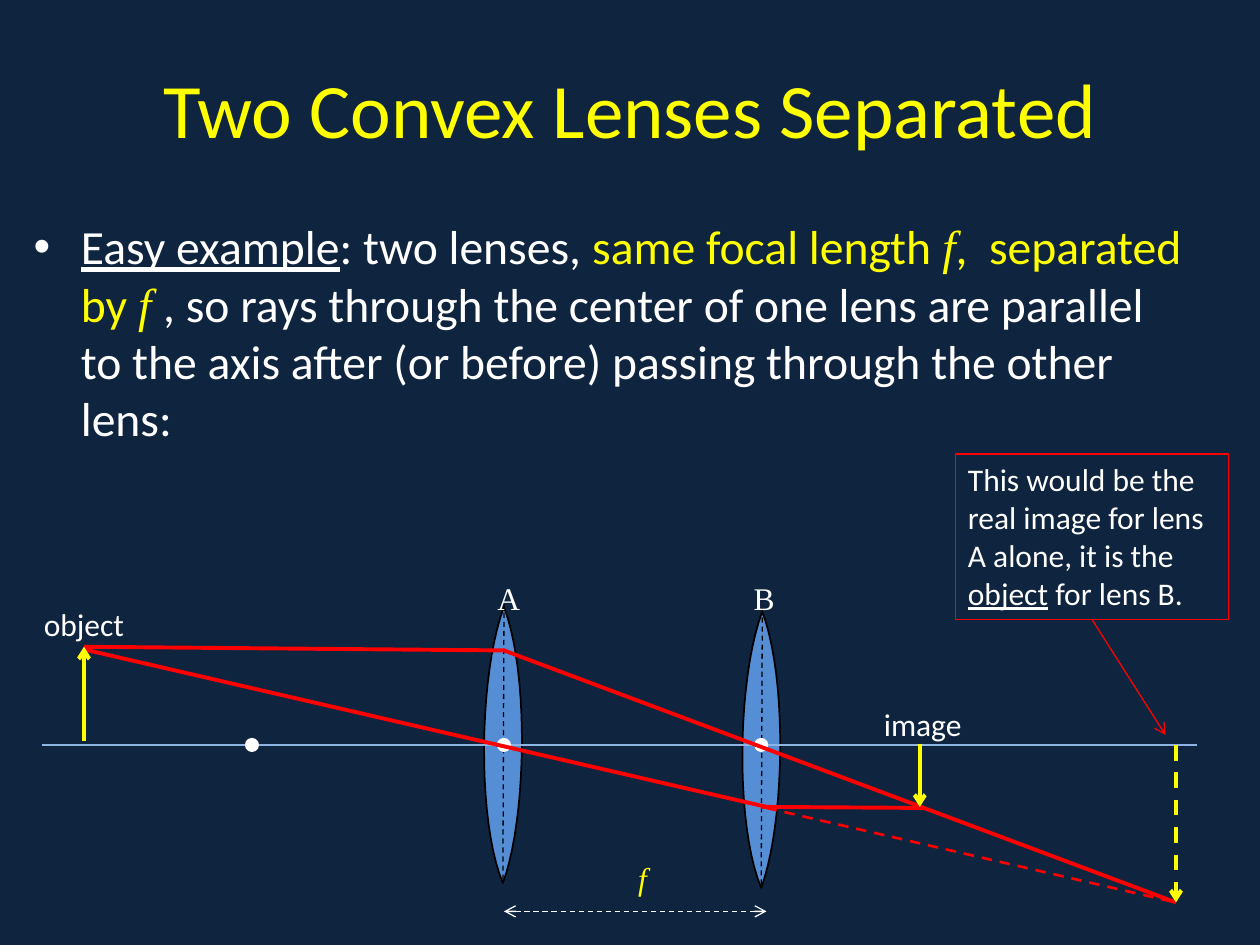
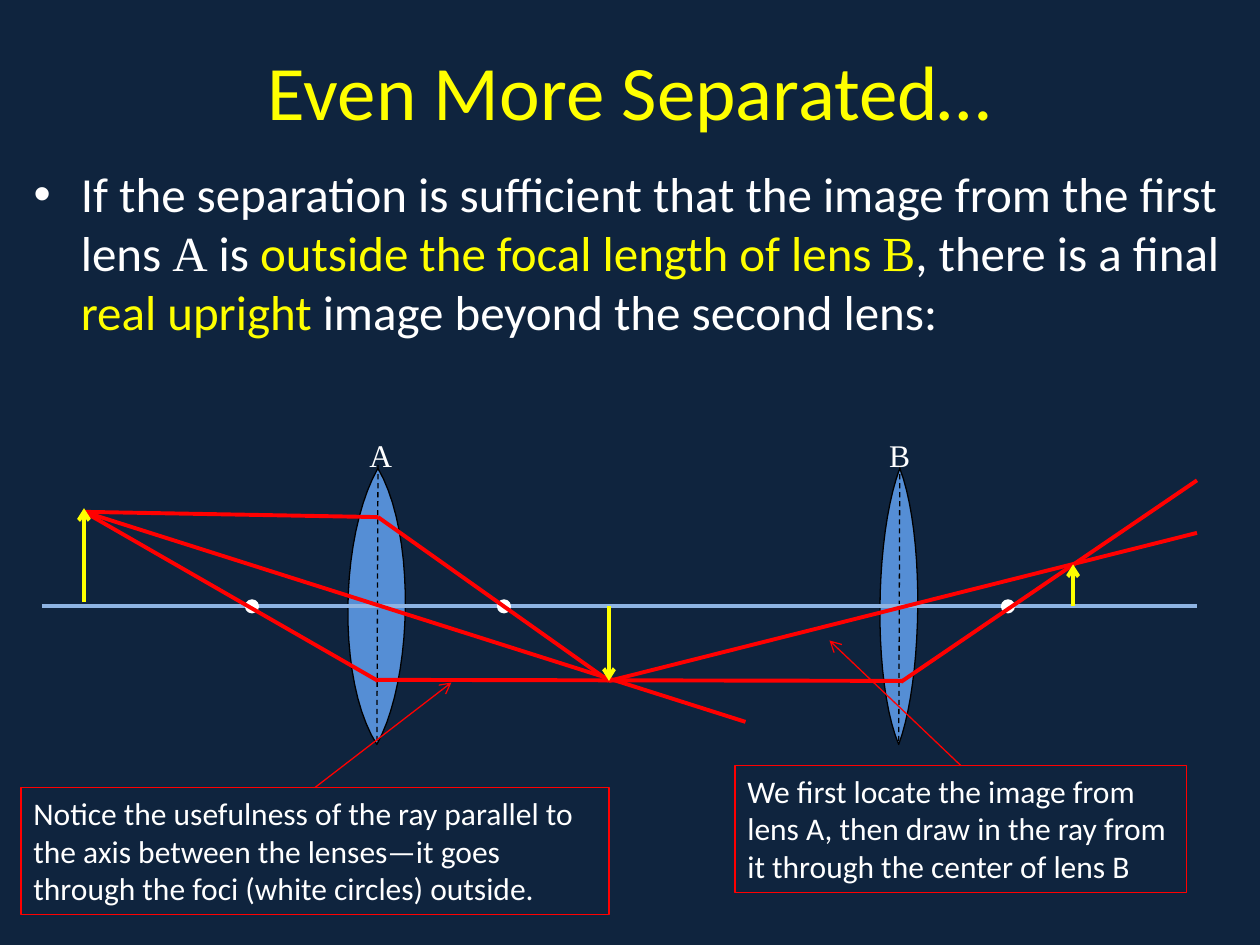
from itertools import chain

from lxml.etree import SubElement
from pptx import Presentation
from pptx.dml.color import RGBColor as RGB
from pptx.enum.dml import MSO_LINE as DASH
from pptx.enum.shapes import MSO_CONNECTOR as CONN, MSO_SHAPE as SHAPE
from pptx.enum.text import MSO_ANCHOR as ANCHOR, MSO_AUTO_SIZE as AUTO, PP_ALIGN as ALIGN
from pptx.oxml.ns import qn
from pptx.util import Emu, Inches, Pt

COLS = 120
WIDTH, HEIGHT = Inches(10), Inches(7.5)
CELL = WIDTH / COLS
LENS_HEIGHT = 26.3
AXIS = LENS_HEIGHT / 2
BOTTOM, TOP = 2, 0

COLORS = {
    "night": "0F243E", "white": "FFFFFF", "yellow": "FFFF00", "red": "FF0000",
    "lens": "558ED5", "axis": "8EB4E3", "black": "000000",
}
SANS = {"name": "Calibri"}
SERIF = {"name": "Times New Roman"}
STYLES = {
    "plain": ("white", SANS),
    "under": ("white", {**SANS, "underline": True}),
    "key": ("yellow", SANS),
    "serif": ("white", SERIF),
    "key serif": ("yellow", SERIF),
    "symbol": ("yellow", {**SERIF, "italic": True}),
}
TEXT_FRAME = {"word_wrap": True, "auto_size": AUTO.NONE, "vertical_anchor": ANCHOR.TOP}


def grid(*cells):
    return [Emu(round(n * CELL)) for n in cells]


def color(name):
    return RGB.from_string(COLORS[name])


def set_all(target, values):
    for name, value in values.items():
        setattr(target, name, value)


def write(tf, runs, size, align=ALIGN.LEFT, **frame):
    set_all(tf, {**TEXT_FRAME, **frame})
    p = tf.paragraphs[0]
    p.alignment = align
    for text, style in runs:
        shade, values = STYLES[style]
        r = p.add_run()
        r.text = text
        set_all(r.font, {**values, "size": Pt(size)})
        r.font.color.rgb = color(shade)


def place(sp, box):
    set_all(sp, dict(zip(("left", "top", "width", "height"), grid(*box))))


def paint(sp, fill, line, width):
    sp.shadow.inherit = False
    if fill:
        sp.fill.solid()
        sp.fill.fore_color.rgb = color(fill)
    else:
        sp.fill.background()
    sp.line.color.rgb = color(line)
    sp.line.width = Pt(width)


def draw_line(s, start, end, shade, width, dash=False, heads=()):
    cx = s.shapes.add_connector(CONN.STRAIGHT, *grid(*start, *end))
    cx.line.color.rgb = color(shade)
    cx.line.width = Pt(width)
    if dash:
        cx.line.dash_style = DASH.DASH
    ln = cx.line._get_or_add_ln()
    for head in heads:
        SubElement(ln, qn(f"a:{head}"), type="arrow")
    SubElement(cx._element.spPr, qn("a:effectLst"))
    return cx


def add_label(s, box, text, style="plain"):
    sp = s.shapes.add_textbox(*grid(*box))
    write(sp.text_frame, [(text, style)], 18)


def add_callout(s, box, runs, side, target):
    sp = s.shapes.add_shape(SHAPE.RECTANGLE, *grid(*box))
    paint(sp, None, "red", 0.75)
    write(sp.text_frame, runs, 18)
    col, row, w, h = box
    start = (col + w / 2, row + (h if side == BOTTOM else 0))
    pointer = draw_line(s, start, target, "red", 0.75, heads=["tailEnd"])
    pointer.begin_connect(sp, side)


def bezier(points, steps=20):
    for i in range(1, steps + 1):
        t = i / steps
        weights = ((1 - t) ** 3, 3 * t * (1 - t) ** 2, 3 * t * t * (1 - t), t ** 3)
        yield tuple(sum(w * pt[k] for w, pt in zip(weights, points)) for k in (0, 1))


def add_lens(s, x, y, bulge, outline):
    tip, foot = (0, 0), (-0.1, LENS_HEIGHT)
    left = [tip, (-0.97 * bulge, 6.5), (-1.03 * bulge, 20.4), foot]
    right = [foot, (0.87 * bulge, 20.2), (0.97 * bulge, 6.3), tip]
    edge = [grid(x + dx, y + dy) for dx, dy in chain(bezier(left), bezier(right))]
    builder = s.shapes.build_freeform(*grid(x, y))
    builder.add_line_segments(edge, close=True)
    paint(builder.convert_to_shape(), "lens", "black", outline)
    draw_line(s, (x, y - 0.3), (x - 0.1, y + LENS_HEIGHT - 0.3), "black", 0.75, dash=True)


def add_bench(s, box, lenses, foci, rays, arrows, axis_width, outline):
    col, row, w, h = box
    axis = row + h / 2

    def at(point):
        return col + point[0], axis + point[1]

    for x, drop, bulge in lenses:
        add_lens(s, col + x, row + drop, bulge, outline)
    draw_line(s, at((0, 0)), at((w, 0)), "axis", axis_width)
    for x in foci:
        cx, cy = at((x, 0))
        dot = s.shapes.add_shape(SHAPE.FLOWCHART_CONNECTOR, *grid(cx - 0.5, cy - 0.5, 1, 1))
        paint(dot, "white", "white", 2)
    for start, end, *dash in rays:
        draw_line(s, at(start), at(end), "red", 1.5 if dash else 2.25, bool(dash))
    for start, end, *dash in arrows:
        draw_line(s, at(start), at(end), "yellow", 2.25, bool(dash), ["tailEnd"])


def add_slide(prs, title, title_row, body, body_box, size):
    s = prs.slides.add_slide(prs.slide_layouts[1])
    place(s.shapes.title, (6, title_row, 108, 15))
    write(s.shapes.title.text_frame, [(title, "key")], 44, ALIGN.CENTER,
          vertical_anchor=ANCHOR.MIDDLE)
    place(s.placeholders[1], body_box)
    write(s.placeholders[1].text_frame, body, size)
    return s


def separated_slide(prs):
    s = add_slide(prs, "Two Convex Lenses Separated", 2.75, [
        ("Easy example", "under"), (": two lenses, ", "plain"),
        ("same focal length ", "key"), ("f", "symbol"), (",  separated by ", "key"),
        ("f ", "symbol"),
        (", so rays through the center of one lens are parallel to the axis after "
         "(or before) passing through the other lens:", "plain"),
    ], (2, 20.1, 112, 20), 27.2)
    add_bench(
        s, (4, 57.8, 110, LENS_HEIGHT),
        lenses=[(44, 0, 2.5), (68.6, 0.45, 2.5)],
        foci=[20, 44, 68.5],
        rays=[
            ((44, -9), (108, 15)),
            ((4, -9.35), (44.1, -9)),
            ((68.5, 5.9), (84, 6)),
            ((69, 6), (108, 15), DASH.DASH),
            ((4, -9.1), (69, 5.9)),
        ],
        arrows=[
            ((4, -0.4), (4, -9.35)),
            ((83.6, -0.1), (83.6, 5.9)),
            ((108, 0), (108, 15), DASH.DASH),
        ],
        axis_width=1.5, outline=1)
    add_label(s, (70.6, 54.6, 7, 4.8), "B", "serif")
    add_label(s, (46.2, 54.6, 7, 4.8), "A", "serif")
    add_label(s, (3, 57, 12, 4.8), "object")
    add_label(s, (83, 66.6, 12, 4.8), "image")
    add_callout(s, (91, 43.25, 26, 15.75), [
        ("This would be the real image for lens A alone, it is the ", "plain"),
        ("object", "under"), (" for lens B.", "plain"),
    ], BOTTOM, (111, 70))
    draw_line(s, (48, 86.8), (73, 86.8), "white", 0.75, True, ["headEnd", "tailEnd"])
    add_label(s, (59.6, 81.2, 7, 5), "f", "symbol")


def more_separated_slide(prs):
    s = add_slide(prs, "Even More Separated…", 1, [
        ("If the separation is sufficient that the image from the first lens ", "plain"),
        ("A", "serif"), (" is ", "plain"), ("outside the focal length of lens ", "key"),
        ("B", "key serif"), (", there is a final ", "plain"), ("real upright", "key"),
        (" image beyond the second lens:", "plain"),
    ], (2, 15, 116, 24), 28)
    tip, meet = (4, -9), (54, 7.1)
    add_bench(
        s, (4, 44.6, 110, LENS_HEIGHT),
        lenses=[(32, 0, 3.8), (81.7, 0, 2.5)],
        foci=[20, 44, 92],
        rays=[
            (meet, (110, -7)),
            (tip, (32, -8.5)),
            (tip, (67, 11)),
            (tip, (32, 7.1)),
            ((32, 7), (82, 7.1)),
            ((110, -12), (81.8, 7.2)),
            ((32, -8.5), meet),
        ],
        arrows=[
            ((54, 0), meet),
            ((98.2, 0), (98.2, -4)),
            ((4, -0.4), (4, -9.35)),
        ],
        axis_width=2.25, outline=0.75)
    add_callout(s, (2, 75, 56, 12.1), [
        ("Notice the usefulness of the ray parallel to the axis between the lenses—it goes "
         "through the foci (white circles) outside.", "plain"),
    ], TOP, (43, 65))
    add_callout(s, (70, 72.9, 43, 12.1), [
        ("We first locate the image from lens A, then draw in the ray from it through "
         "the center of lens B", "plain"),
    ], TOP, (79, 61))
    add_label(s, (34, 40.9, 7, 4.8), "A", "serif")
    add_label(s, (83.5, 40.9, 7, 4.8), "B", "serif")


def main():
    prs = Presentation()
    set_all(prs, {"slide_width": WIDTH, "slide_height": HEIGHT})
    fill = prs.slide_master.background.fill
    fill.solid()
    fill.fore_color.rgb = color("night")
    separated_slide(prs)
    more_separated_slide(prs)
    prs.save("out.pptx")


if __name__ == "__main__":
    main()
